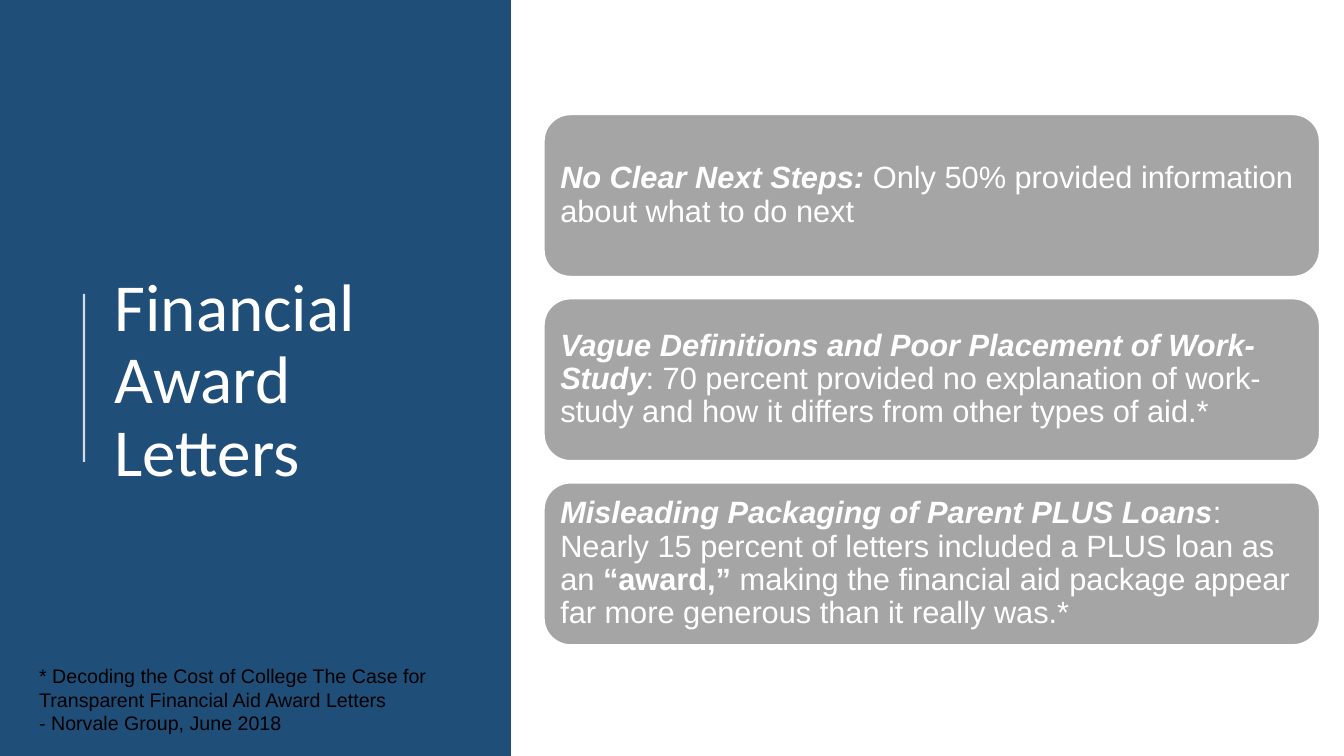
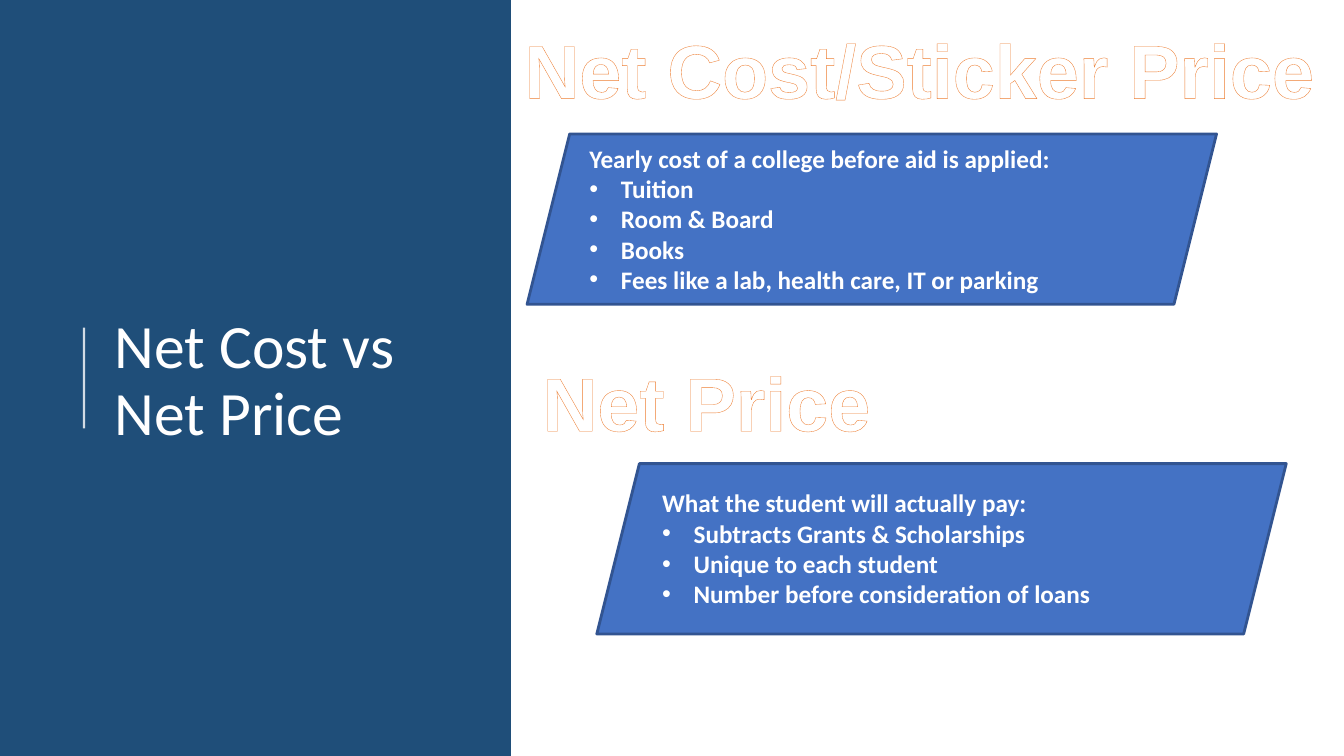
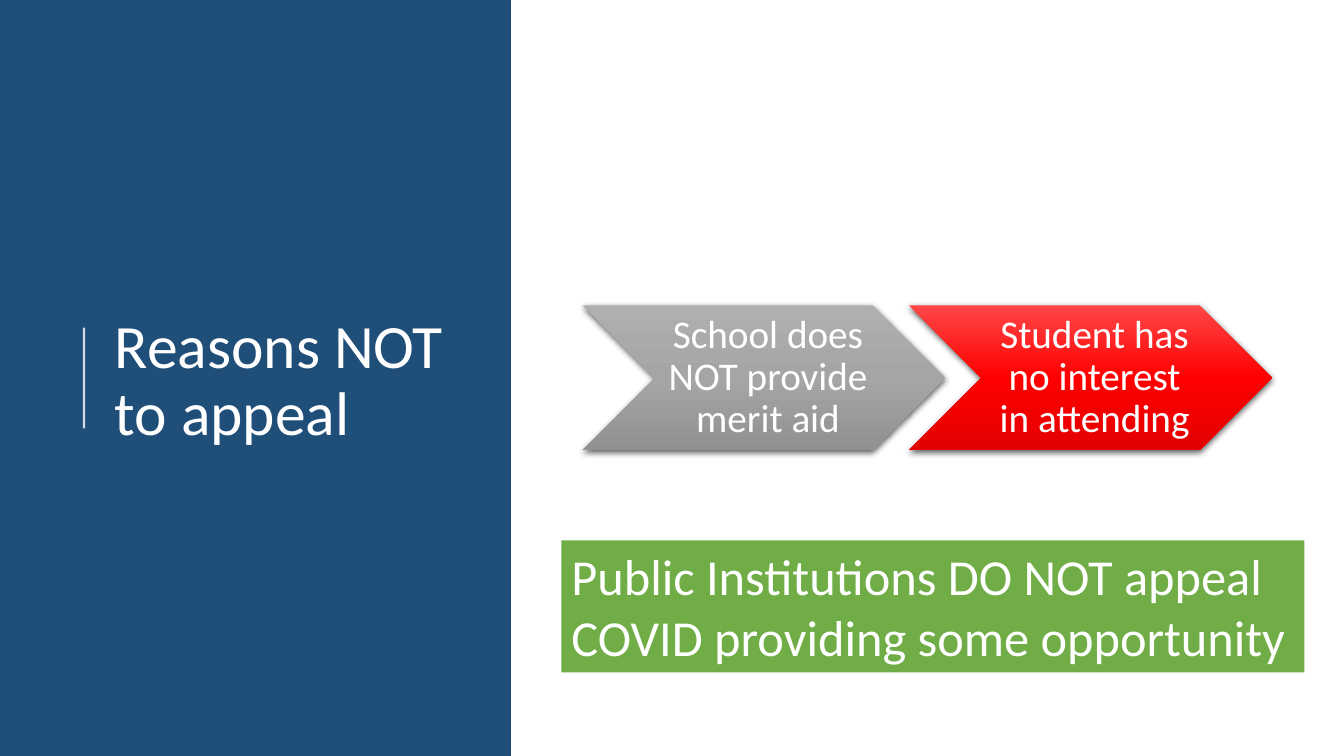
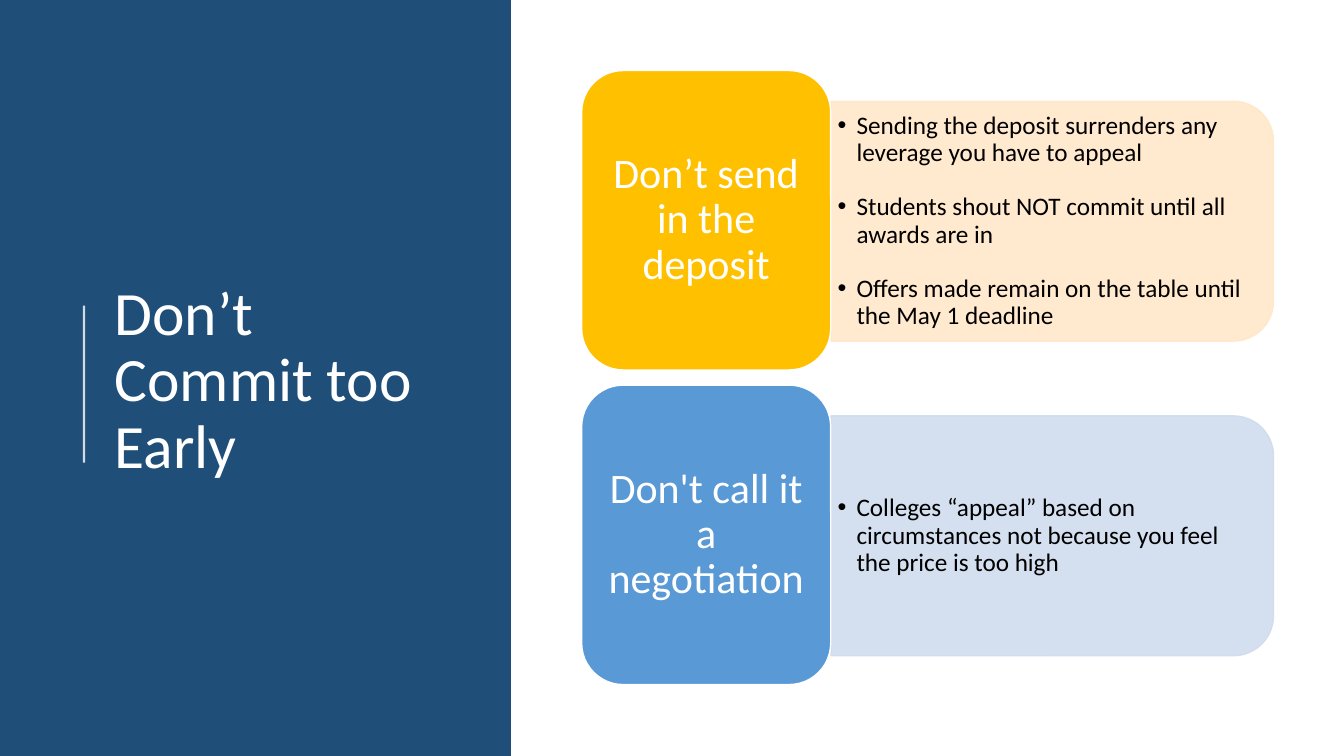
import pptx
import pptx.dml.color
import pptx.enum.shapes
import pptx.enum.text
import pptx.oxml
import pptx.oxml.ns
import pptx.util
from lxml import etree

SHAPES = pptx.enum.shapes.MSO_SHAPE
ALIGN = pptx.enum.text.PP_ALIGN
ANCHOR = pptx.enum.text.MSO_ANCHOR
qn = pptx.oxml.ns.qn

UNIT = 190500
COLUMNS, ROWS = 64, 36
NAVY, BLUE, BLUE_EDGE, GRAY = "1F4E79", "4472C4", "325491", "A5A5A5"
WHITE, BLACK, ORANGE, GREEN = "FFFFFF", "000000", "ED7D31", "70AD47"
DRAWING = pptx.oxml.ns.nsdecls("a")


def add_box(slide, kind, box, fill=None, line=None, width=1):
    lengths = [round(cells * UNIT) for cells in box]
    if kind is None:
        return slide.shapes.add_textbox(*lengths)
    shape = slide.shapes.add_shape(kind, *lengths)
    shape.shadow.inherit = False
    shape.fill.solid()
    shape.fill.fore_color.rgb = pptx.dml.color.RGBColor.from_string(fill)
    if line:
        shape.line.color.rgb = pptx.dml.color.RGBColor.from_string(line)
        shape.line.width = pptx.util.Pt(width)
    else:
        shape.line.fill.background()
    return shape


def style_text(shape, size, color, font="Calibri", align=ALIGN.LEFT, anchor=ANCHOR.TOP,
               spacing=1.0, insets=(0.48, 0.24, 0.48, 0.24), wrap=True, bold=None,
               first_bullet=None, indent=0):
    frame = shape.text_frame
    frame.auto_size = pptx.enum.text.MSO_AUTO_SIZE.NONE
    frame.word_wrap = wrap
    frame.vertical_anchor = anchor
    frame.margin_left, frame.margin_top, frame.margin_right, frame.margin_bottom = [
        round(inset * UNIT) for inset in insets]
    for number, paragraph in enumerate(frame.paragraphs):
        paragraph.alignment = align
        paragraph.line_spacing = spacing
        for run in paragraph.runs:
            run.font.size = pptx.util.Pt(size)
            run.font.name = font
            run.font.color.rgb = pptx.dml.color.RGBColor.from_string(color)
            if bold is not None:
                run.font.bold = bold
        if first_bullet is not None and number >= first_bullet:
            properties = paragraph._p.get_or_add_pPr()
            properties.set("marL", str(round(indent * UNIT)))
            properties.set("indent", str(-round(indent * UNIT)))
            etree.SubElement(properties, qn("a:buFont"), typeface="Arial")
            etree.SubElement(properties, qn("a:buChar"), char="•")


presentation = pptx.Presentation()
presentation.slide_width = COLUMNS * UNIT
presentation.slide_height = ROWS * UNIT

titles = [
    ("Financial\vAward \vLetters", 48, 14, 22),
    ("Net Cost vs Net Price", 44, 15.6, 20.4),
    ("Reasons NOT to appeal", 44, 15.6, 20.4),
    ("Don’t Commit too Early", 44, 14.55, 22.03),
]
for text, size, rule_top, rule_bottom in titles:
    slide = presentation.slides.add_slide(presentation.slide_layouts[5])
    title = slide.shapes.title
    title.left, title.top, title.width, title.height = [
        round(cells * UNIT) for cells in (4.98, 3.74, 17.5, 28.9)]
    title.text_frame.text = text
    style_text(title, size, WHITE, anchor=ANCHOR.MIDDLE, spacing=0.9)
    band = add_box(slide, SHAPES.RECTANGLE, (0, 0, 24.33, ROWS), NAVY)
    rule = slide.shapes.add_connector(
        pptx.enum.shapes.MSO_CONNECTOR.STRAIGHT,
        4 * UNIT, round(rule_bottom * UNIT), 4 * UNIT, round(rule_top * UNIT))
    rule.line.color.rgb = pptx.dml.color.RGBColor.from_string(WHITE)
    rule.line.width = pptx.util.Pt(1.5)
    rule_properties = rule.element.spPr
    for color in rule_properties.iter(qn("a:srgbClr")):
        etree.SubElement(color, qn("a:alpha"), val="80000")
    etree.SubElement(rule_properties, qn("a:effectLst"))
    title.element.addprevious(band.element)
    title.element.addprevious(rule.element)

letters_slide, price_slide, appeal_slide, commit_slide = presentation.slides

findings = [
    [("No Clear Next Steps: ", True, True),
     ("Only 50% provided information about what to do next", False, False)],
    [("Vague Definitions and Poor Placement of Work-Study", True, True),
     (": 70 percent provided no explanation of work-study and how it differs "
      "from other types of aid.*", False, False)],
    [("Misleading Packaging of Parent PLUS Loans", True, True),
     (": Nearly 15 percent of letters included a PLUS loan as an ", False, False),
     ("“award,” ", True, False),
     ("making the financial aid package appear far more generous than it really was.*",
      False, False)],
]
for row, finding in enumerate(findings):
    card = add_box(letters_slide, SHAPES.ROUNDED_RECTANGLE,
                   (25.87, 5.42 + row * 8.77, 37, 7.78), GRAY, WHITE, 2)
    for text, bold, italic in finding:
        run = card.text_frame.paragraphs[0].add_run()
        run.text = text
        run.font.bold = bold
        run.font.italic = italic
    style_text(card, 22, WHITE, "Arial", anchor=ANCHOR.MIDDLE, spacing=0.9, insets=[0.43] * 4)

source_note = add_box(letters_slide, None, (1.39, 31.39, 22.94, 3.89))
source_note.text_frame.text = (
    "* Decoding the Cost of College The Case for Transparent Financial Aid Award Letters\n"
    "- Norvale Group, June 2018")
style_text(source_note, 14, BLACK, "Arial")

prices = [
    ("Net Cost/Sticker Price", (24.33, 0.86, 38.93, 4.85), (25.1, 6.38), (27.6, 6.58),
     ["Yearly cost of a college before aid is applied:", "Tuition", "Room & Board", "Books",
      "Fees like a lab, health care, IT or parking"]),
    ("Net Price", (25.3, 16.7, 16.7, 4.85), (28.42, 22.08), (31.06, 22.99),
     ["What the student will actually pay:", "Subtracts Grants & Scholarships",
      "Unique to each student", "Number before consideration of loans"]),
]
for name, heading_box, panel_corner, list_corner, lines in prices:
    add_box(price_slide, SHAPES.PARALLELOGRAM, (*panel_corner, 32.83, 8.11), BLUE, BLUE_EDGE, 2)
    price_list = add_box(price_slide, None, (*list_corner, 36.43, 7.78))
    price_list.text_frame.text = "\n".join(lines)
    style_text(price_list, 18, WHITE, bold=True, first_bullet=1, indent=1.5)
    heading = add_box(price_slide, None, heading_box)
    heading.text_frame.text = name
    style_text(heading, 54, WHITE, "Arial", ALIGN.CENTER, wrap=False, bold=True)
    outline = pptx.oxml.parse_xml(
        f'<a:ln {DRAWING} w="6600"><a:solidFill><a:srgbClr val="{ORANGE}"/></a:solidFill></a:ln>')
    heading.text_frame.paragraphs[0].runs[0].font._element.insert(0, outline)

reasons = [
    ("School does NOT provide merit aid", ("AFAFAF", GRAY, "919191")),
    ("Student has no interest in attending", ("FF4747", "FF0000", "E30000")),
]
for column, (text, shades) in enumerate(reasons):
    chevron = add_box(appeal_slide, SHAPES.CHEVRON,
                      (27.74 + column * 15.55, 14.54, 17.28, 6.91), shades[1])
    chevron.text_frame.text = text
    style_text(chevron, 28, WHITE, align=ALIGN.CENTER, anchor=ANCHOR.MIDDLE, spacing=0.9,
               insets=(0.58, 0.19, 0.19, 0.19))
    stops = "".join(f'<a:gs pos="{number * 50000}"><a:srgbClr val="{shade}"/></a:gs>'
                    for number, shade in enumerate(shades))
    gradient = pptx.oxml.parse_xml(
        f'<a:gradFill {DRAWING} rotWithShape="1"><a:gsLst>{stops}</a:gsLst>'
        '<a:lin ang="5400000" scaled="0"/></a:gradFill>')
    shadow = pptx.oxml.parse_xml(
        f'<a:outerShdw {DRAWING} blurRad="57150" dist="19050" dir="5400000" algn="ctr" '
        f'rotWithShape="0"><a:srgbClr val="{BLACK}"><a:alpha val="63000"/></a:srgbClr>'
        '</a:outerShdw>')
    chevron_properties = chevron.element.spPr
    chevron_properties.replace(chevron_properties.find(qn("a:solidFill")), gradient)
    chevron_properties.find(qn("a:effectLst")).append(shadow)

public_note = add_box(appeal_slide, SHAPES.RECTANGLE, (26.74, 25.73, 35.38, 6.29), GREEN)
public_note.text_frame.text = "Public Institutions DO NOT appeal\nCOVID providing some opportunity"
style_text(public_note, 36, WHITE, wrap=False)

warnings = [
    ("Don’t send in the deposit", "FFC000", "FFE8CA",
     ["Sending the deposit surrenders any leverage you have to appeal",
      "Students shout NOT commit until all awards are in",
      "Offers made remain on the table until the May 1 deadline"]),
    ("Don't call it a negotiation", "5999D5", "D0DCEE",
     ["Colleges “appeal” based on circumstances not because you feel the price is too high"]),
]
for row, (name, label_color, panel_color, lines) in enumerate(warnings):
    top = row * 14.98
    panel = add_box(commit_slide, SHAPES.ROUND_2_SAME_RECTANGLE,
                    (44.4, top, 11.42, 21.07), panel_color, panel_color)
    panel.rotation = 90
    for color in panel.element.spPr.iter(qn("a:srgbClr")):
        etree.SubElement(color, qn("a:alpha"), val="90000")
    details = add_box(commit_slide, None, (39.55, top + 5.38, 20.5, 10.32))
    details.text_frame.text = "\n".join(lines)
    for paragraph in details.text_frame.paragraphs[1:]:
        paragraph.space_before = pptx.util.Pt(19.5)
    style_text(details, 18, BLACK, anchor=ANCHOR.MIDDLE, spacing=0.9,
               insets=(0.34, 0.19, 0.34, 0.19), first_bullet=0, indent=0.9)
    label = add_box(commit_slide, SHAPES.ROUNDED_RECTANGLE,
                    (27.7, top + 3.36, 11.86, 14.26), label_color, WHITE)
    label.text_frame.text = name
    style_text(label, 30, WHITE, align=ALIGN.CENTER, anchor=ANCHOR.MIDDLE, spacing=0.9,
               insets=(0.58, 0.29, 0.58, 0.29))

presentation.save("out.pptx")
